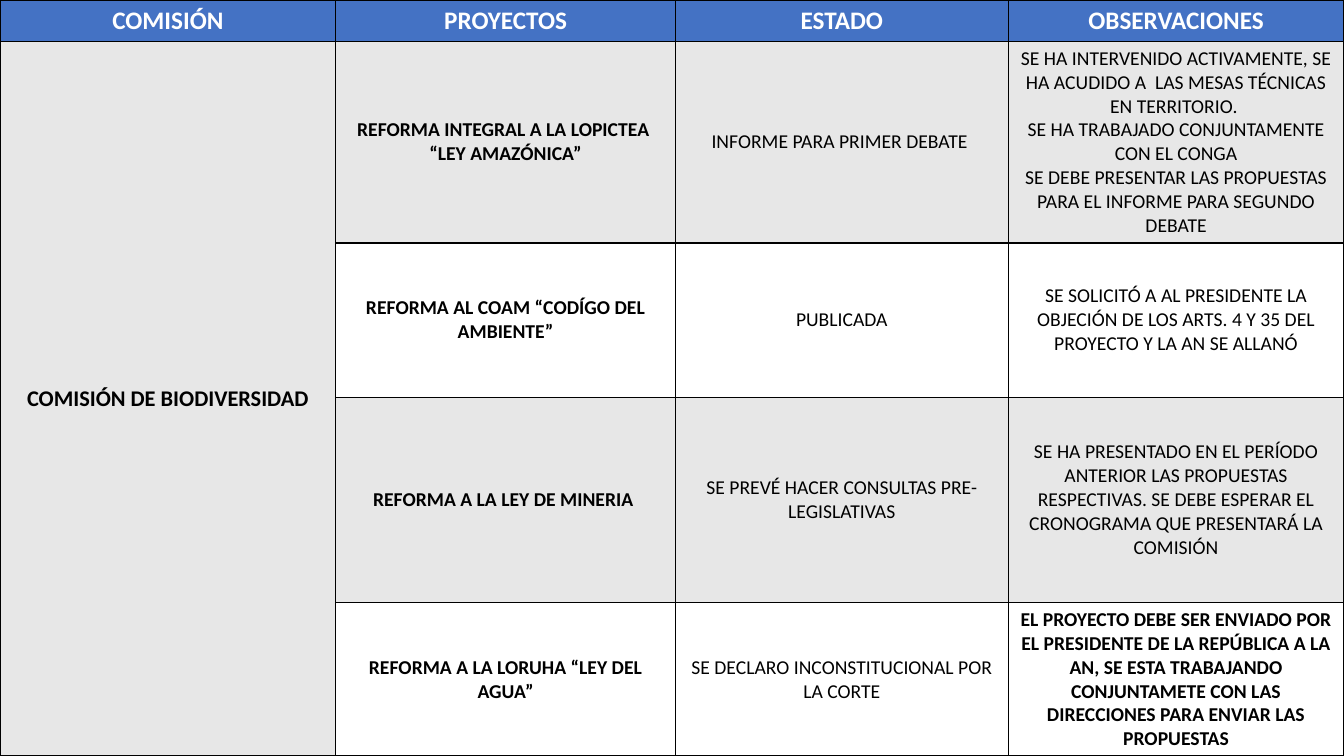
from lxml.etree import SubElement
from pptx import Presentation
from pptx.dml.color import RGBColor
from pptx.enum.text import MSO_ANCHOR as Anchor, PP_ALIGN as Align
from pptx.oxml.ns import qn
from pptx.util import Inches, Pt

HEADER_BLUE, BAND_GRAY, WHITE, BLACK = "4472C4", "E7E7E7", "FFFFFF", "000000"
COLUMN_WIDTHS = [3.33, 3.37, 3.3, 3.33]
ROW_HEIGHTS = [0.41, 2, 1.53, 2.04, 1.52]
HEADINGS = ["COMISIÓN", "PROYECTOS", "ESTADO", "OBSERVACIONES"]
COMMISSION = "COMISIÓN DE BIODIVERSIDAD"
PROJECTS = [
    ("REFORMA INTEGRAL A LA LOPICTEA \n“LEY AMAZÓNICA”",
     "INFORME PARA PRIMER DEBATE ",
     "SE HA INTERVENIDO ACTIVAMENTE, SE HA ACUDIDO A  LAS MESAS TÉCNICAS EN TERRITORIO. \n"
     "SE HA TRABAJADO CONJUNTAMENTE CON EL CONGA\n"
     "SE DEBE PRESENTAR LAS PROPUESTAS PARA EL INFORME PARA SEGUNDO DEBATE"),
    ("REFORMA AL COAM “CODÍGO DEL AMBIENTE”",
     "PUBLICADA",
     "SE SOLICITÓ A AL PRESIDENTE LA OBJECIÓN DE LOS ARTS. 4 Y 35 DEL PROYECTO "
     "Y LA AN SE ALLANÓ"),
    ("REFORMA A LA LEY DE MINERIA ",
     "SE PREVÉ HACER CONSULTAS PRE-LEGISLATIVAS",
     "SE HA PRESENTADO EN EL PERÍODO ANTERIOR LAS PROPUESTAS RESPECTIVAS. "
     "SE DEBE ESPERAR EL CRONOGRAMA QUE PRESENTARÁ LA COMISIÓN"),
    ("REFORMA A LA LORUHA “LEY DEL AGUA”",
     "SE DECLARO INCONSTITUCIONAL POR LA CORTE",
     "EL PROYECTO DEBE SER ENVIADO POR EL PRESIDENTE DE LA REPÚBLICA A LA AN, "
     "SE ESTA TRABAJANDO CONJUNTAMETE CON LAS DIRECCIONES PARA ENVIAR LAS PROPUESTAS"),
]


def rgb(hex_color):
    return RGBColor.from_string(hex_color)


def add_borders(cell):
    properties = cell._tc.get_or_add_tcPr()
    for position, side in enumerate(("lnL", "lnR", "lnT", "lnB")):
        border = SubElement(properties, qn(f"a:{side}"), w=str(Pt(1)))
        fill = SubElement(border, qn("a:solidFill"))
        SubElement(fill, qn("a:srgbClr"), val=BLACK)
        properties.insert(position, border)


def style_cell(cell, fill):
    cell.fill.solid()
    cell.fill.fore_color.rgb = rgb(fill)
    add_borders(cell)


def write_cell(cell, text, size, bold, color=BLACK, anchor=Anchor.MIDDLE):
    cell.text = text
    cell.vertical_anchor = anchor
    for paragraph in cell.text_frame.paragraphs:
        paragraph.alignment = Align.CENTER
        font = paragraph.font
        font.name, font.size, font.bold = "Calibri", Pt(size), bold
        font.color.rgb = rgb(color)


def add_project_table(slide, left, top, width, height):
    table = slide.shapes.add_table(
        len(ROW_HEIGHTS), len(COLUMN_WIDTHS),
        Inches(left), Inches(top), Inches(width), Inches(height)).table
    for column, column_width in zip(table.columns, COLUMN_WIDTHS):
        column.width = Inches(column_width)
    for row, row_height in zip(table.rows, ROW_HEIGHTS):
        row.height = Inches(row_height)

    for column, heading in enumerate(HEADINGS):
        style_cell(table.cell(0, column), HEADER_BLUE)
        write_cell(table.cell(0, column), heading, 18, True, WHITE, Anchor.TOP)

    last = len(PROJECTS)
    for row, project in enumerate(PROJECTS, 1):
        band = BAND_GRAY if row % 2 else WHITE
        style_cell(table.cell(row, 0), BAND_GRAY)
        for column, text in enumerate(project, 1):
            bold = column == 1 or (row == last and column == 3)
            style_cell(table.cell(row, column), band)
            write_cell(table.cell(row, column), text, 14, bold)

    commission = table.cell(1, 0)
    commission.merge(table.cell(last, 0))
    write_cell(commission, COMMISSION, 16, True)


def main():
    deck = Presentation()
    deck.slide_width, deck.slide_height = Inches(13.33), Inches(7.5)
    slide = deck.slides.add_slide(deck.slide_layouts[6])
    add_project_table(slide, 0, 0, 13.33, 7.5)
    deck.save("out.pptx")


if __name__ == "__main__":
    main()
